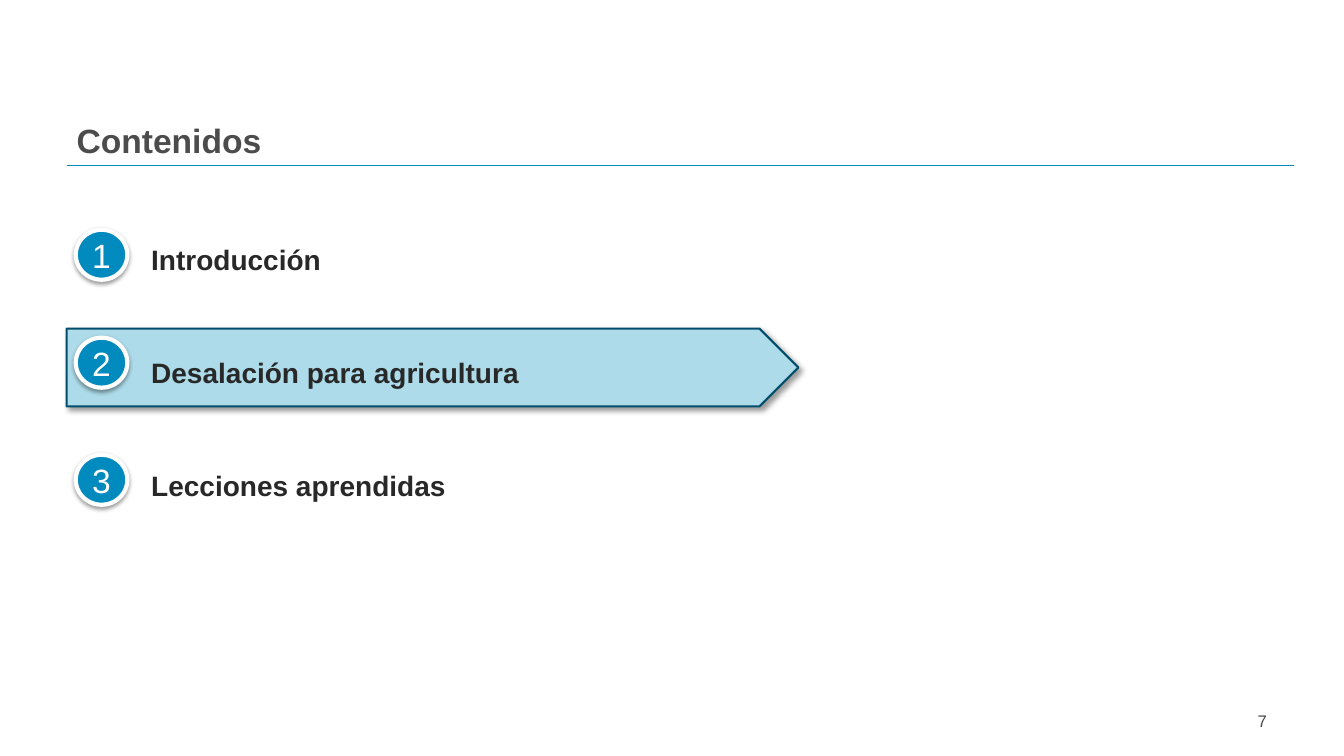
from lxml.etree import SubElement
from pptx import Presentation
from pptx.dml.color import RGBColor
from pptx.enum.shapes import MSO_CONNECTOR as Connector, MSO_SHAPE as Preset
from pptx.enum.text import MSO_ANCHOR as Anchor, MSO_AUTO_SIZE as AutoSize, PP_ALIGN as Align
from pptx.oxml.ns import qn
from pptx.util import Cm, Pt

# Agenda entries with the top of each number badge in cm
SECTIONS = [("Introducción", 5.79), ("Desalación para agricultura", 8.51),
            ("Lecciones aprendidas", 11.46)]


def color(hex_string):
    return RGBColor.from_string(hex_string)


class AgendaSlide:
    FONT = "Arial"
    BLUE, DARK_BLUE, PALE_BLUE = "008ABD", "004E6B", "ADDBE9"
    WHITE, GRAY, INK = "FFFFFF", "4C4C4C", "272827"

    def __init__(self, prs):
        self.slide = prs.slides.add_slide(prs.slide_layouts[1])
        self.shapes = self.slide.shapes

    def place(self, shape, left, top, width, height):
        shape.left, shape.top = Cm(left), Cm(top)
        shape.width, shape.height = Cm(width), Cm(height)

    def frame(self, shape, anchor, inset_x=0.25, inset_y=0.13):
        frame = shape.text_frame
        frame.word_wrap = True
        frame.auto_size = AutoSize.NONE
        frame.vertical_anchor = anchor
        frame.margin_left = frame.margin_right = Cm(inset_x)
        frame.margin_top = frame.margin_bottom = Cm(inset_y)
        return frame

    def set_text(self, paragraph, text, size, hex_string, bold=False, align=Align.LEFT):
        paragraph.text = text
        paragraph.alignment = align
        font = paragraph.font
        font.name, font.size, font.bold = self.FONT, Pt(size), bold
        font.color.rgb = color(hex_string)

    def title(self, text):
        title = self.shapes.title
        self.place(title, 1.68, 2.9, 11.94, 1.27)
        frame = self.frame(title, Anchor.TOP)
        self.set_text(frame.paragraphs[0], text, 24, self.GRAY, bold=True)

    def rule(self, left, right, y):
        rule = self.shapes.add_connector(Connector.STRAIGHT, Cm(left), Cm(y), Cm(right), Cm(y))
        rule.line.color.rgb = color(self.BLUE)
        rule.line.width = Pt(1.25)
        SubElement(rule._element.spPr, qn("a:effectLst"))

    def agenda(self, entries):
        body = self.slide.placeholders[1]
        self.place(body, 3.81, 6.12, 19.9, 6.6)
        frame = self.frame(body, Anchor.TOP, 0, 0)
        for index, entry in enumerate(entries):
            paragraph = frame.add_paragraph() if index else frame.paragraphs[0]
            properties = paragraph._p.get_or_add_pPr()
            properties.set("marL", "0")
            properties.set("indent", "0")
            SubElement(properties, qn("a:buNone"))
            paragraph.space_before = Pt(56.7 if index else 0)
            self.set_text(paragraph, entry, 20, self.INK, bold=True)
        # Keep the list in front of the highlight
        self.shapes._spTree.append(body._element)

    def preset(self, kind, box, fill, line, line_width, shadow):
        shape = self.shapes.add_shape(kind, *map(Cm, box))
        shape.fill.solid()
        shape.fill.fore_color.rgb = color(fill)
        shape.line.color.rgb = color(line)
        shape.line.width = Pt(line_width)
        shape.shadow.inherit = False
        opacity, blur, distance, angle = shadow
        effects = shape._element.spPr.find(qn("a:effectLst"))
        outer = SubElement(effects, qn("a:outerShdw"), blurRad=str(Pt(blur)),
                           dist=str(Pt(distance)), dir=str(angle * 60000), rotWithShape="0")
        black = SubElement(outer, qn("a:srgbClr"), val="000000")
        SubElement(black, qn("a:alpha"), val=str(opacity * 1000))
        return shape

    def highlight(self, *box):
        self.preset(Preset.PENTAGON, box, self.PALE_BLUE, self.DARK_BLUE, 1.5, (40, 4, 3, 45))

    def badge(self, number, top):
        badge = self.preset(Preset.FLOWCHART_CONNECTOR, (1.91, top, 1.3, 1.26),
                            self.BLUE, self.WHITE, 3, (38, 3.1, 1.6, 90))
        frame = self.frame(badge, Anchor.MIDDLE, 0, 0)
        frame.word_wrap = False
        self.set_text(frame.paragraphs[0], str(number), 24, self.WHITE, align=Align.CENTER)

    def page_number(self, number):
        box = self.shapes.add_textbox(Cm(24.28), Cm(17.65), Cm(7.9), Cm(1.02))
        frame = self.frame(box, Anchor.MIDDLE)
        self.set_text(frame.paragraphs[0], str(number), 12, self.GRAY, align=Align.RIGHT)


def main():
    prs = Presentation()
    prs.slide_width, prs.slide_height = Cm(33.87), Cm(19.05)
    contents = AgendaSlide(prs)

    # Heading
    contents.title("Contenidos")
    contents.rule(1.68, 32.61, 4.17)

    # Agenda with the current section highlighted
    contents.highlight(1.68, 8.28, 18.44, 1.96)
    contents.agenda([entry for entry, _ in SECTIONS])
    for number, (_, top) in enumerate(SECTIONS, start=1):
        contents.badge(number, top)

    # Footer
    contents.page_number(7)
    prs.save("out.pptx")


if __name__ == "__main__":
    main()
